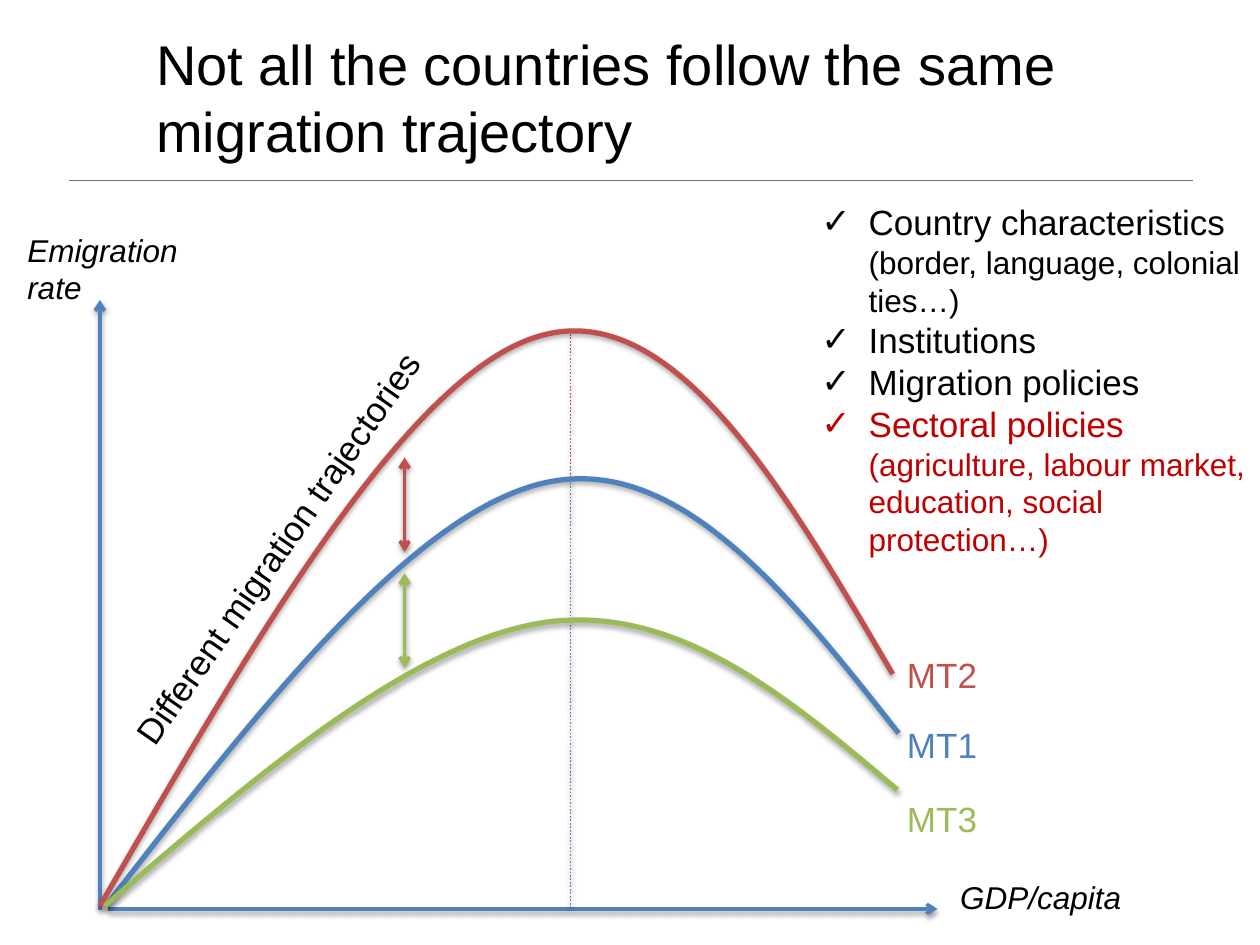
import pptx
import pptx.util
import pptx.dml.color
import pptx.enum.dml
import pptx.enum.shapes
import pptx.enum.text
import pptx.oxml
import pptx.oxml.ns
import lxml.etree

Pt = pptx.util.Pt
Align = pptx.enum.text.PP_ALIGN
Anchor = pptx.enum.text.MSO_ANCHOR
Dash = pptx.enum.dml.MSO_LINE
qn = pptx.oxml.ns.qn
hues = {"black": "000000", "blue": "4F81BD", "red": "C0504D",
        "green": "9BBB59", "dark": "C00000", "gray": "727272"}


def write(text, box=None, para=None, size=20, hue="black", slant=False, align=Align.LEFT, turn=0):
    if box:
        shape = slide.shapes.add_textbox(*map(Pt, box))
        shape.rotation = turn
        shape.text_frame.word_wrap = True
        para = shape.text_frame.paragraphs[0]
    para.alignment = align
    run = para.add_run()
    run.text = text
    run.font.name = "Arial"
    run.font.size = Pt(size)
    run.font.italic = slant
    run.font.color.rgb = pptx.dml.color.RGBColor.from_string(hues[hue])


def stroke(shape, hue, width, dash=None, ends=(), alpha=38, dist=1.6):
    shape.line.color.rgb = pptx.dml.color.RGBColor.from_string(hues[hue])
    shape.line.width = Pt(width)
    if dash:
        shape.line.dash_style = dash
    for end in ends:
        lxml.etree.SubElement(shape.line._get_or_add_ln(), qn(f"a:{end}"), type="arrow")
    props = shape._element.spPr
    glow = lxml.etree.SubElement(props, qn("a:effectLst"))
    if alpha:
        cast = lxml.etree.SubElement(glow, qn("a:outerShdw"), blurRad=str(Pt(3.1)),
                                     dist=str(Pt(dist)), dir="5400000", rotWithShape="0")
        tone = lxml.etree.SubElement(cast, qn("a:srgbClr"), val=hues["black"])
        lxml.etree.SubElement(tone, qn("a:alpha"), val=str(alpha * 1000))


deck = pptx.Presentation()
deck.slide_width, deck.slide_height = Pt(720), Pt(540)
slide = deck.slides.add_slide(deck.slide_layouts[1])
title, body = slide.placeholders

for shape, box, anchor in [(title, (82.1, 15.1, 583.9, 80.6), Anchor.MIDDLE),
                           (body, (462.2, 111.2, 266.4, 220.3), Anchor.TOP)]:
    shape.left, shape.top, shape.width, shape.height = map(Pt, box)
    shape.text_frame.word_wrap = True
    shape.text_frame.auto_size = pptx.enum.text.MSO_AUTO_SIZE.NONE
    shape.text_frame.vertical_anchor = anchor
write("Not all the countries follow the same migration trajectory",
      para=title.text_frame.paragraphs[0], size=32)

items = [
    ("Country characteristics ", "(border, language, colonial ties…)", "black"),
    ("Institutions", "", "black"),
    ("Migration policies", "", "black"),
    ("Sectoral policies ", "(agriculture, labour market, education, social protection…)", "dark"),
]
for rank, (head, note, hue) in enumerate(items):
    para = body.text_frame.add_paragraph() if rank else body.text_frame.paragraphs[0]
    props = para._p.get_or_add_pPr()
    props.set("marL", str(Pt(27)))
    props.set("indent", str(-Pt(27)))
    lxml.etree.SubElement(props, qn("a:buChar"), char="✓")
    para.space_before = Pt(0)
    write(head, para=para, hue=hue)
    if note:
        write(note, para=para, size=18, hue=hue)

tip, both = ["tailEnd"], ["headEnd", "tailEnd"]
lines = [
    (39.6, 103, 681.8, 103, "gray", 0.5, None, [], 0),
    (61.9, 519.4, 535.7, 519.4, "blue", 2, None, tip, 38),
    (57.1, 519.8, 57.1, 171.4, "blue", 2, None, tip, 38),
    (326, 275.8, 326, 519.4, "blue", 1, Dash.ROUND_DOT, [], 38),
    (326, 190.8, 326, 275.8, "red", 1, Dash.ROUND_DOT, [], 38),
    (231.2, 261.4, 231.2, 315.4, "red", 2, None, both, 38),
    (231.2, 327.6, 231.2, 381.6, "green", 2, None, both, 38),
]
for x1, y1, x2, y2, hue, width, dash, ends, alpha in lines:
    line = slide.shapes.add_connector(pptx.enum.shapes.MSO_CONNECTOR.STRAIGHT,
                                      Pt(x1), Pt(y1), Pt(x2), Pt(y2))
    stroke(line, hue, width, dash, ends, alpha)

across = [0, 87.8, 175.7, 251.3, 326.9, 390, 453]
curves = [
    ("MT1", "blue", 60.5, 410.1, 273.6, [517.7, 404.6, 292.3, 275.8, 259.2, 339.1, 419]),
    ("MT2", "red", 57.1, 369.7, 189.2, [517.7, 365.8, 213.8, 192, 169.9, 277.2, 385.2]),
    ("MT3", "green", 59.8, 452.2, 354.4, [517.7, 442.1, 367.2, 355.7, 344.9, 398.2, 451.4]),
]
for name, hue, left, top, peak, heights in curves:
    knots = [(Pt(left + x), Pt(max(y, peak))) for x, y in zip(across, heights)]
    form = slide.shapes.build_freeform(*knots[0])
    form.add_line_segments(knots[1:], close=False)
    curve = form.convert_to_shape()
    track = curve._element.find(".//" + qn("a:path"))
    legs = track.findall(qn("a:lnTo"))
    for first in (0, 3):
        bend = lxml.etree.SubElement(track, qn("a:cubicBezTo"))
        for leg, y in zip(legs[first:first + 3], heights[first + 1:first + 4]):
            spot = leg[0]
            spot.set("y", str(Pt(y) - Pt(peak)))
            bend.append(spot)
            track.remove(leg)
    curve.fill.background()
    stroke(curve, hue, 3, alpha=35, dist=1.8)
    write(name, box=(511.2, top, 55.4, 31.7), hue=hue)

write("Different migration trajectories", box=(-17.3, 297.4, 351.4, 31.7),
      align=Align.CENTER, turn=304.8)
write("GDP/capita", box=(541.6, 498.2, 130.3, 28.8), size=18, slant=True)
write("Emigration rate", box=(8.5, 128.2, 116.6, 51.1), size=18, slant=True)

deck.save("out.pptx")
